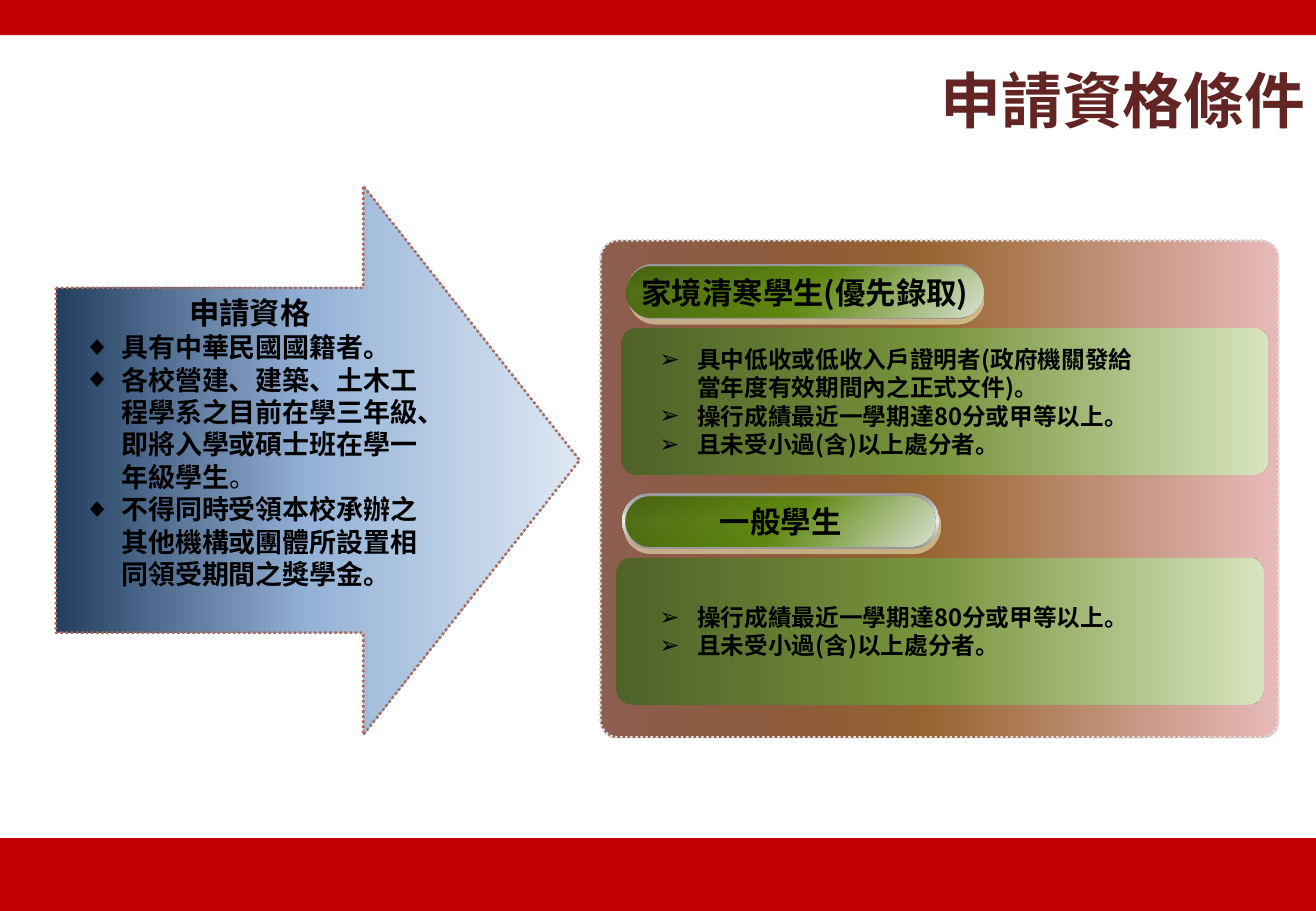
import pptx
import pptx.util
import pptx.dml.color
import pptx.enum.dml
import pptx.enum.shapes
import pptx.enum.text
import pptx.oxml
import pptx.oxml.ns
import lxml.etree

Inches = pptx.util.Inches
Pt = pptx.util.Pt
RGB = pptx.dml.color.RGBColor
Shape = pptx.enum.shapes.MSO_SHAPE
Align = pptx.enum.text.PP_ALIGN
Anchor = pptx.enum.text.MSO_ANCHOR
qn = pptx.oxml.ns.qn

FONT = "Noto Sans CJK SC"
RED = RGB(0xC0, 0x00, 0x00)
MAROON = RGB(0x63, 0x25, 0x23)
BLACK = RGB(0x00, 0x00, 0x00)
RUST = RGB(0xAE, 0x6A, 0x58)
SILVER = RGB(0xDD, 0xDD, 0xDD)
CREAM = RGB(0xFF, 0xFF, 0xCC)
GRAY = RGB(0x96, 0x96, 0x96)
BLUES = [(1, RGB(0x25, 0x40, 0x61), 100), (49, RGB(0x95, 0xB3, 0xD7), 100),
         (99, RGB(0xDC, 0xE6, 0xF2), 100)]
BROWNS = [(1, RGB(0x5A, 0x16, 0x00), 68), (49, RGB(0x99, 0x66, 0x33), 100),
          (99, RGB(0xE6, 0xB9, 0xB8), 100)]
GREENS = [(0, RGB(0x4F, 0x62, 0x28), 100), (48, RGB(0x77, 0x93, 0x3C), 100),
          (100, RGB(0xD7, 0xE4, 0xBD), 100)]
METALS = [(0, GRAY, 100), (50, RGB(0xEA, 0xEA, 0xEA), 100), (100, GRAY, 100)]
LEAVES = [(0, RGB(0x3E, 0x5D, 0x00), 90), (51, RGB(0x58, 0x84, 0x00), 90),
          (100, RGB(0xDB, 0xE3, 0xD5), 100)]


def add_tint(parent, color, alpha):
    tint = lxml.etree.SubElement(parent, qn("a:srgbClr"), val=str(color))
    if alpha < 100:
        lxml.etree.SubElement(tint, qn("a:alpha"), val=str(alpha * 1000))


def add_block(slide, kind, box, stops, angle=0, adjust=(), edge=None):
    block = slide.shapes.add_shape(kind, *map(Inches, box))
    block.shadow.inherit = False
    for index, value in enumerate(adjust):
        block.adjustments[index] = value
    block.fill.gradient()
    block.fill.gradient_angle = angle
    ramp = block._element.spPr.find(".//" + qn("a:gsLst"))
    for stop in list(ramp):
        ramp.remove(stop)
    for place, color, alpha in stops:
        stop = lxml.etree.SubElement(ramp, qn("a:gs"), pos=str(place * 1000))
        add_tint(stop, color, alpha)
    if edge is None:
        block.line.fill.background()
    else:
        block.line.color.rgb = edge
        block.line.width = Pt(1.5)
        block.line.dash_style = pptx.enum.dml.MSO_LINE.ROUND_DOT
    return block


def set_font(para, size, color=BLACK):
    font = para.font
    font.size = Pt(size)
    font.bold = True
    font.color.rgb = color
    font.name = FONT
    props = para._p.pPr.find(qn("a:defRPr"))
    lxml.etree.SubElement(props, qn("a:ea"), typeface=FONT)


def add_bullet(para, mark, left):
    props = para._p.get_or_add_pPr()
    props.set("marL", str(Inches(left)))
    props.set("indent", str(Inches(-0.31)))
    lxml.etree.SubElement(props, qn("a:buFont"), typeface="Arial")
    lxml.etree.SubElement(props, qn("a:buChar"), char=mark)


def add_head(frame, text):
    para = frame.paragraphs[0]
    para.text = text
    para.alignment = Align.CENTER
    set_font(para, 18)


def add_title(slide, box, text):
    title = slide.shapes.title
    title.left, title.top, title.width, title.height = map(Inches, box)
    frame = title.text_frame
    frame.auto_size = pptx.enum.text.MSO_AUTO_SIZE.NONE
    frame.vertical_anchor = Anchor.MIDDLE
    para = frame.paragraphs[0]
    para.text = text
    para.alignment = Align.RIGHT
    para.line_spacing = 1.5
    set_font(para, 36, MAROON)


def add_band(slide, box):
    band = slide.shapes.add_shape(Shape.RECTANGLE, *map(Inches, box))
    band.shadow.inherit = False
    band.fill.solid()
    band.fill.fore_color.rgb = RED
    band.line.fill.background()


def add_arrow(slide, box, head, rows):
    arrow = add_block(slide, Shape.RIGHT_ARROW, box, BLUES,
                      adjust=(0.628, 0.413), edge=RUST)
    frame = arrow.text_frame
    frame.word_wrap = True
    frame.vertical_anchor = Anchor.MIDDLE
    frame.margin_bottom = Inches(0.35)
    add_head(frame, head)
    for text, tail in rows:
        para = frame.add_paragraph()
        para.alignment = Align.LEFT
        add_bullet(para, "◆", 0.44)
        set_font(para, 16)
        para.add_run().text = text
        if tail:
            run = para.add_run()
            run.text = tail
            run.font.name = "Times New Roman"
            run.font.bold = False


def add_pill(slide, box, inset, text):
    left, top, width, height = box
    rim = add_block(slide, Shape.ROUNDED_RECTANGLE, box, METALS, 90, (0.5,))
    glow = lxml.etree.SubElement(
        rim._element.spPr.find(qn("a:effectLst")), qn("a:outerShdw"),
        dist=str(Pt(3.2)), dir=str(72 * 60000), algn="ctr", rotWithShape="0")
    add_tint(glow, CREAM, 50)
    face = (left + inset, top + 0.03, width - 2 * inset, height - 0.05)
    pill = add_block(slide, Shape.ROUNDED_RECTANGLE, face, LEAVES, 315, (0.5,))
    pill.text_frame.word_wrap = False
    pill.text_frame.vertical_anchor = Anchor.MIDDLE
    add_head(pill.text_frame, text)


def add_tier(slide, box, inset, wide, edge, head, rows):
    left, top, width, height = box
    add_block(slide, Shape.ROUNDED_RECTANGLE, box, GREENS, adjust=(0.109,))
    note = slide.shapes.add_textbox(
        Inches(edge), Inches(top), Inches(4.24), Inches(height))
    frame = note.text_frame
    frame.word_wrap = True
    frame.vertical_anchor = Anchor.MIDDLE
    for index, text in enumerate(rows):
        para = frame.add_paragraph() if index else frame.paragraphs[0]
        para.text = text
        add_bullet(para, "➢", 0.31)
        set_font(para, 14)
    add_pill(slide, (left + 0.05, top - 0.53, wide, 0.46), inset, head)


def add_panel(slide, box, tiers):
    left, top, width, height = box
    add_block(slide, Shape.ROUNDED_RECTANGLE, box, BROWNS,
              adjust=(0.035,), edge=SILVER)
    for index, (shift, inset, wide, head, rows) in enumerate(tiers):
        tier = (left + shift, top + 0.72 + index * 1.89, 5.33, 1.21)
        add_tier(slide, tier, inset, wide, left + 0.39, head, rows)


def main():
    deck = pptx.Presentation()
    deck.slide_width = Inches(10.83)
    deck.slide_height = Inches(7.5)
    slide = deck.slides.add_slide(deck.slide_layouts[5])
    for top, height in ((6.9, 0.6), (0, 0.29)):
        add_band(slide, (0, top, 10.83, height))
    add_title(slide, (2.26, 0.21, 8.58, 0.92), "申請資格條件")
    add_arrow(slide, (0.46, 1.53, 4.31, 4.52), "申請資格", [
        ("具有中華民國國籍者。", ""),
        ("各校營建、建築、土木工程學系之目前在學三年級、即將入學或碩士班在學一年級學生", "。"),
        ("不得同時受領本校承辦之其他機構或團體所設置相同領受期間之獎學金。", "")])
    shared = ["操行成績最近一學期達80分或甲等以上。", "且未受小過(含)以上處分者。"]
    proof = "具中低收或低收入戶證明者(政府機關發給當年度有效期間內之正式文件)。"
    add_panel(slide, (4.94, 1.98, 5.58, 4.09), [
        (0.17, 0, 2.93, "家境清寒學生(優先錄取)", [proof] + shared),
        (0.13, 0.03, 2.61, "一般學生", shared)])
    deck.save("out.pptx")


if __name__ == "__main__":
    main()
